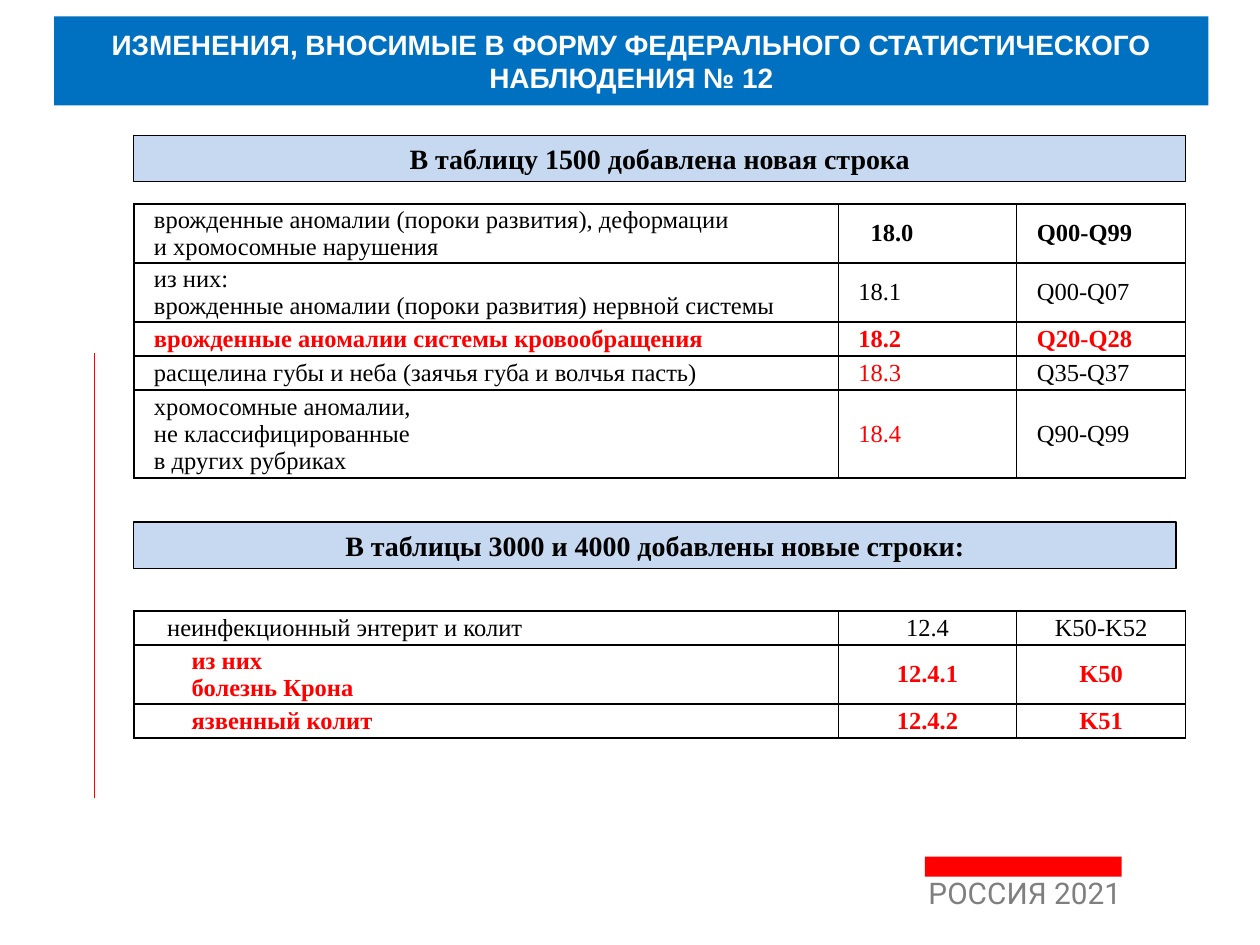
from lxml.etree import SubElement
from pptx import Presentation
from pptx.dml.color import RGBColor
from pptx.enum.shapes import MSO_CONNECTOR, MSO_SHAPE
from pptx.enum.text import MSO_ANCHOR, PP_ALIGN
from pptx.oxml import parse_xml
from pptx.oxml.ns import nsdecls, qn
from pptx.util import Pt

WHITE = RGBColor(0xFF, 0xFF, 0xFF)
BLACK = RGBColor(0x00, 0x00, 0x00)
RED = RGBColor(0xFF, 0x00, 0x00)
GRAY = RGBColor(0x7F, 0x7F, 0x7F)
BLUE = RGBColor(0x00, 0x70, 0xC0)
PALE_BLUE = RGBColor(0xC6, 0xD9, 0xF1)

SANS, SERIF, FOOTER_FONT = "Arial", "Times New Roman", "Roboto"
LEFT, CENTER = PP_ALIGN.LEFT, PP_ALIGN.CENTER

# Cell styles: colour, bold
PLAIN, BOLD = (BLACK, False), (BLACK, True)
NEW, NEW_BOLD = (RED, False), (RED, True)

TABLE_LEFT = 76.5
COLUMNS = (402.5, 102, 96.5)
ROW = 19.4

# Cells: text ("\n" parts paragraphs, "\v" breaks a line), style, indent, alignment
ANOMALIES = [
    [("врожденные аномалии (пороки развития), деформации\vи хромосомные нарушения", PLAIN, 6.5, LEFT),
     ("18.0", BOLD, 13.5, LEFT), ("Q00-Q99", BOLD, 6.5, LEFT)],
    [("из них:\nврожденные аномалии (пороки развития) нервной системы", PLAIN, 6.5, LEFT),
     ("18.1", PLAIN, 6.5, LEFT), ("Q00-Q07", PLAIN, 6.5, LEFT)],
    [("врожденные аномалии системы кровообращения", NEW_BOLD, 6.5, LEFT),
     ("18.2", NEW_BOLD, 6.5, LEFT), ("Q20-Q28", NEW_BOLD, 6.5, LEFT)],
    [("расщелина губы и неба (заячья губа и волчья пасть)", PLAIN, 6.5, LEFT),
     ("18.3", NEW, 6.5, LEFT), ("Q35-Q37", PLAIN, 6.5, LEFT)],
    [("хромосомные аномалии,\vне классифицированные\vв других рубриках", PLAIN, 6.5, LEFT),
     ("18.4", NEW, 6.5, LEFT), ("Q90-Q99", PLAIN, 6.5, LEFT)],
]
COLITIS = [
    [("неинфекционный энтерит и колит", PLAIN, 14, LEFT),
     ("12.4", PLAIN, 0, CENTER), ("K50-K52", PLAIN, 0, CENTER)],
    [("из них\nболезнь Крона", NEW_BOLD, 28, LEFT),
     ("12.4.1", NEW_BOLD, 0, CENTER), ("K50", NEW_BOLD, 0, CENTER)],
    [("язвенный колит", NEW_BOLD, 28, LEFT),
     ("12.4.2", NEW_BOLD, 0, CENTER), ("K51", NEW_BOLD, 0, CENTER)],
]


class SlideBuilder:
    def __init__(self, slide, font=SERIF, line_width=0.75, border_width=1):
        self.s = slide
        self.font = font
        self.line_width = line_width
        self.border_width = border_width

    def add_text(self, p, text, size, color, bold=False, font=None, align=CENTER, indent=0):
        p.alignment = align
        if indent:
            p._p.get_or_add_pPr().set("marL", str(Pt(indent)))
        for i, line in enumerate(text.split("\v")):
            if i:
                p.add_line_break()
            r = p.add_run()
            r.text = line
            r.font.name = font or self.font
            r.font.size = Pt(size)
            r.font.bold = bold
            r.font.color.rgb = color

    def box(self, x, y, w, h, fill, line=None):
        """Add a rectangle and return its first paragraph."""
        sp = self.s.shapes.add_shape(MSO_SHAPE.RECTANGLE, Pt(x), Pt(y), Pt(w), Pt(h))
        sp.shadow.inherit = False
        sp.fill.solid()
        sp.fill.fore_color.rgb = fill
        if line is None:
            sp.line.fill.background()
        else:
            sp.line.color.rgb = line
            sp.line.width = Pt(self.line_width)
        tf = sp.text_frame
        tf.word_wrap = True
        tf.vertical_anchor = MSO_ANCHOR.MIDDLE
        return tf.paragraphs[0]

    def heading(self, y, w, text):
        p = self.box(TABLE_LEFT, y, w, 26.6, PALE_BLUE, BLACK)
        self.add_text(p, text, 16, BLACK, bold=True)

    def line(self, x1, y1, x2, y2, color):
        sp = self.s.shapes.add_connector(MSO_CONNECTOR.STRAIGHT, Pt(x1), Pt(y1), Pt(x2), Pt(y2))
        sp.line.color.rgb = color
        sp.line.width = Pt(self.line_width)
        SubElement(sp._element.spPr, qn("a:effectLst"))

    def footer(self, x, y, w, h, text):
        tf = self.s.shapes.add_textbox(Pt(x), Pt(y), Pt(w), Pt(h)).text_frame
        tf.word_wrap = True
        p = tf.paragraphs[0]
        p.line_spacing = 0.8
        p.space_before = Pt(3.4)
        self.add_text(p, text, 17, GRAY, font=FOOTER_FONT, align=LEFT)

    def border(self, cell):
        tcPr = cell._tc.get_or_add_tcPr()
        for side in "LRTB":
            tcPr.append(parse_xml(
                f'<a:ln{side} {nsdecls("a")} w="{Pt(self.border_width)}"><a:solidFill>'
                f'<a:srgbClr val="{BLACK}"/></a:solidFill></a:ln{side}>'))

    def table(self, y, heights, rows):
        tbl = self.s.shapes.add_table(len(rows), len(COLUMNS), Pt(TABLE_LEFT), Pt(y),
                                      Pt(sum(COLUMNS)), Pt(sum(heights))).table
        tbl.first_row = tbl.horz_banding = False
        for col, width in zip(tbl.columns, COLUMNS):
            col.width = Pt(width)
        for i, (height, row) in enumerate(zip(heights, rows)):
            tbl.rows[i].height = Pt(height)
            for j, content in enumerate(row):
                self.fill_cell(tbl.cell(i, j), *content)

    def fill_cell(self, cell, text, style, indent, align):
        self.border(cell)
        cell.fill.background()
        cell.vertical_anchor = MSO_ANCHOR.MIDDLE
        cell.margin_left = cell.margin_right = Pt(5)
        cell.margin_top = cell.margin_bottom = Pt(0)
        tf = cell.text_frame
        color, bold = style
        for i, part in enumerate(text.split("\n")):
            p = tf.add_paragraph() if i else tf.paragraphs[0]
            self.add_text(p, part, 14, color, bold, align=align, indent=indent)


def main():
    prs = Presentation()
    prs.slide_width, prs.slide_height = Pt(720), Pt(540)
    s = SlideBuilder(prs.slides.add_slide(prs.slide_layouts[6]))

    s.footer(523.5, 500.5, 135.5, 34, "РОССИЯ 2021")
    s.box(528.5, 489.5, 112.5, 11.5, RED)
    s.line(54, 202, 54, 456, RED)

    title = s.box(31, 9.3, 659.5, 51, BLUE)
    s.add_text(title, "ИЗМЕНЕНИЯ, ВНОСИМЫЕ В ФОРМУ ФЕДЕРАЛЬНОГО СТАТИСТИЧЕСКОГО НАБЛЮДЕНИЯ № 12",
               16, WHITE, bold=True, font=SANS)

    s.table(116.7, (31, 31, ROW, ROW, 46.5), ANOMALIES)
    s.heading(77.3, 601, "В таблицу 1500 добавлена новая строка")
    s.heading(298.3, 595.5, "В таблицы 3000 и 4000 добавлены новые строки:")
    s.table(349.2, (ROW, 33.8, ROW), COLITIS)

    prs.save("out.pptx")


if __name__ == "__main__":
    main()
